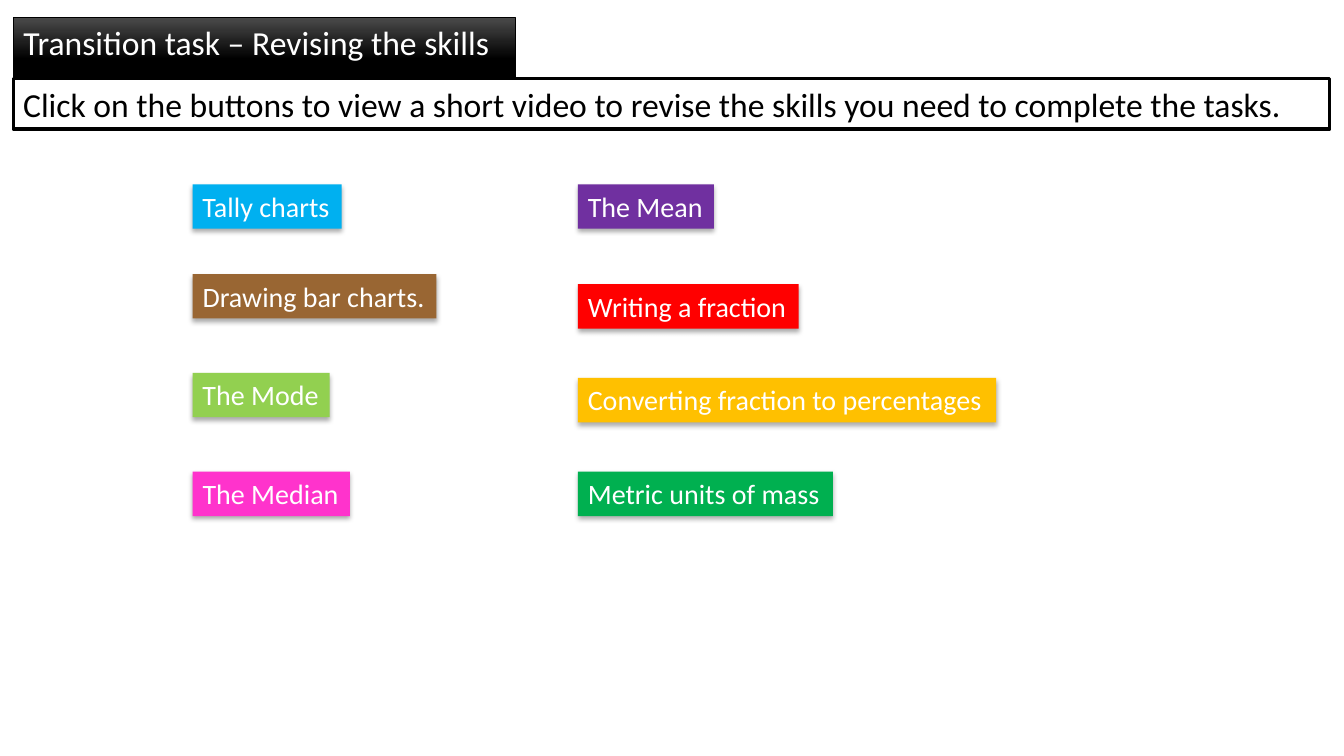
from dataclasses import dataclass

from lxml.etree import SubElement
from pptx import Presentation
from pptx.dml.color import RGBColor
from pptx.enum.text import MSO_ANCHOR, MSO_AUTO_SIZE, PP_ALIGN
from pptx.oxml.ns import qn
from pptx.util import Inches, Pt

SLIDE_WIDTH, SLIDE_HEIGHT = Inches(13.33), Inches(7.5)


@dataclass(frozen=True)
class Theme:
    font: str = "Calibri"
    heading_size: int = 24
    button_size: int = 20
    black: str = "000000"
    white: str = "FFFFFF"
    title_glow: str = "4B4B4B"
    blue: str = "00B0F0"
    brown: str = "996633"
    lime: str = "92D050"
    pink: str = "FF33CC"
    purple: str = "7030A0"
    red: str = "FF0000"
    amber: str = "FFC000"
    green: str = "00B050"


THEME = Theme()

# Positions and sizes are percentages of the slide's width and height
MARGIN = 0.98
BAR_HEIGHT = 6.67
BUTTON_HEIGHT = 5.87

# Each column: left edge, then (label, colour, top, width) for its buttons
BUTTON_COLUMNS = [
    (14.33, [
        ("Tally charts", THEME.blue, 24.4, 11.1),
        ("Drawing bar charts.", THEME.brown, 36.27, 18.15),
        ("The Mode", THEME.lime, 49.33, 10.2),
        ("The Median", THEME.pink, 62.4, 11.7),
    ]),
    (43, [
        ("The Mean", THEME.purple, 24.4, 10.13),
        ("Writing a fraction", THEME.red, 37.6, 16.43),
        ("Converting fraction to percentages", THEME.amber, 50, 31.13),
        ("Metric units of mass", THEME.green, 62.4, 18.98),
    ]),
]


def box(left, top, width, height):
    """Turn percentages of the slide into lengths."""
    return (int(SLIDE_WIDTH * left / 100), int(SLIDE_HEIGHT * top / 100),
            int(SLIDE_WIDTH * width / 100), int(SLIDE_HEIGHT * height / 100))


def rgb(colour):
    return RGBColor.from_string(colour)


def write(shape, text, *, size, colour, wrap=True):
    frame = shape.text_frame
    frame.text = text
    frame.word_wrap = wrap
    frame.auto_size = MSO_AUTO_SIZE.SHAPE_TO_FIT_TEXT
    frame.vertical_anchor = MSO_ANCHOR.TOP
    paragraph = frame.paragraphs[0]
    paragraph.alignment = PP_ALIGN.LEFT
    font = paragraph.runs[0].font
    font.name, font.size = THEME.font, Pt(size)
    font.color.rgb = rgb(colour)


def outline(shape, width):
    shape.line.color.rgb = rgb(THEME.black)
    shape.line.width = Pt(width)


def fill_solid(shape, colour):
    shape.fill.solid()
    shape.fill.fore_color.rgb = rgb(colour)


def drop_shadow(shape):
    shape.shadow.inherit = False
    effects = shape.element.spPr.find(qn("a:effectLst"))
    shadow = SubElement(effects, qn("a:outerShdw"), blurRad=str(Pt(3.5)),
                        dist=str(Pt(2.2)), dir="5400000", rotWithShape="0")
    tint = SubElement(shadow, qn("a:srgbClr"), val=THEME.black)
    SubElement(tint, qn("a:alpha"), val="32000")


def format_title(title, text):
    title.left, title.top, title.width, title.height = box(
        MARGIN, 2.27, 37.36, BAR_HEIGHT)
    title.fill.gradient()
    title.fill.gradient_angle = 270
    stops = ((0, THEME.title_glow), (0.5, THEME.black))
    for stop, (position, colour) in zip(title.fill.gradient_stops, stops):
        stop.position = position
        stop.color.rgb = rgb(colour)
    outline(title, 0.5)
    write(title, text, size=THEME.heading_size, colour=THEME.white)


def add_instruction(slide, text):
    instruction = slide.shapes.add_textbox(*box(MARGIN, 10.4, 97.97, BAR_HEIGHT))
    fill_solid(instruction, THEME.white)
    outline(instruction, 2.25)
    write(instruction, text, size=THEME.heading_size, colour=THEME.black)


def add_button(slide, left, label, colour, top, width):
    button = slide.shapes.add_textbox(*box(left, top, width, BUTTON_HEIGHT))
    fill_solid(button, colour)
    drop_shadow(button)
    write(button, label, size=THEME.button_size, colour=THEME.white, wrap=False)


def main():
    deck = Presentation()
    deck.slide_width, deck.slide_height = SLIDE_WIDTH, SLIDE_HEIGHT
    slide = deck.slides.add_slide(deck.slide_layouts[5])

    # Heading and instruction bars
    format_title(slide.shapes.title, "Transition task – Revising the skills")
    add_instruction(slide, "Click on the buttons to view a short video to revise "
                           "the skills you need to complete the tasks.")

    # Skill buttons
    for left, buttons in BUTTON_COLUMNS:
        for label, colour, top, width in buttons:
            add_button(slide, left, label, colour, top, width)

    deck.save("out.pptx")


if __name__ == "__main__":
    main()
